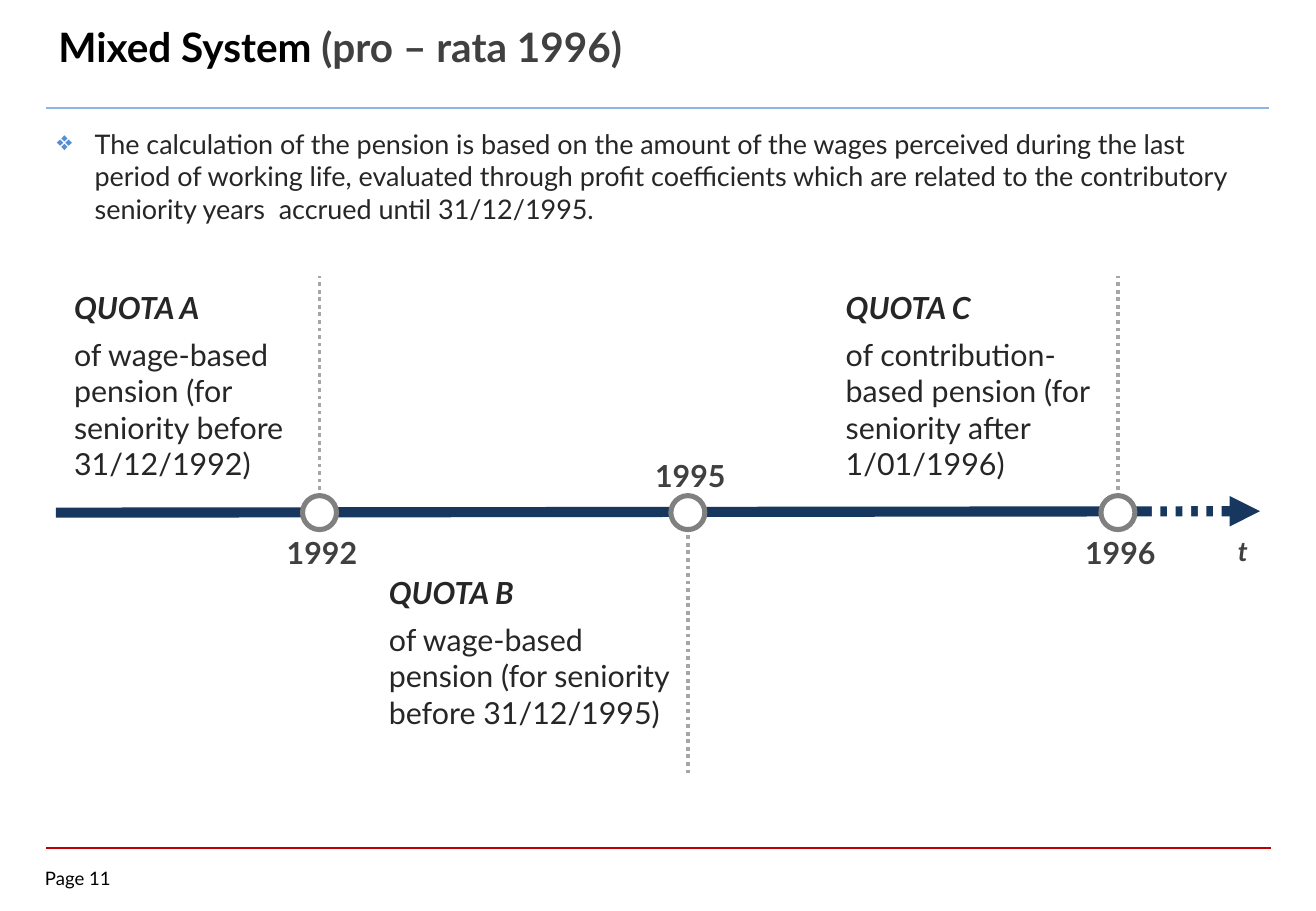
from lxml.etree import SubElement
from pptx import Presentation
from pptx.dml.color import RGBColor as RGB
from pptx.enum.dml import MSO_LINE as Dash
from pptx.enum.shapes import MSO_CONNECTOR as Conn, MSO_SHAPE as Shape
from pptx.enum.text import PP_ALIGN as Align
from pptx.oxml.ns import qn
from pptx.util import Cm, Pt

FONT = "Lato"
DARK, GREY = "262626", "404040"
TITLE = [("Mixed System ", "000000"), ("(pro – rata 1996)", GREY)]
INTRO = (
    "The calculation of the pension is based on the amount of the wages "
    "perceived during the last period of working life, evaluated through "
    "profit coefficients which are related to the contributory seniority "
    "years  accrued until 31/12/1995."
)
RULES = [(0.97, 26.52, 2.26, "8EB4E3", 1.5), (0.97, 26.57, 17.73, "C00000", 1)]
AXIS = 10.72
STOPS = [
    ("1992", 6.68, 10.97, 5.77),
    ("1995", 14.38, 9.37, 16.23),
    ("1996", 23.37, 10.97, 5.77),
]
QUOTAS = [
    ("QUOTA A", "of wage-based pension (for seniority before 31/12/1992)",
     1.55, 6.05, 5.21, 4.2),
    ("QUOTA B", "of wage-based pension (for seniority before 31/12/1995)",
     8.13, 12.01, 6.22, 3.4),
    ("QUOTA C", "of contribution-based pension (for seniority after 1/01/1996)",
     17.68, 6.05, 5.33, 4.2),
]
DOT, GAP_W, GAP_H = 0.71, 0.18, 0.51
GAPS, GAP_X, STEP = 5, 24.08, 0.32
SMALL = (0.1, 0.2, 0.1, 0.2)
QUOTA_INS = (0, 0, 0.1, 0)


def paint(part, tint):
    """Give a fill, line or font one solid colour."""
    if hasattr(part, "solid"):
        part.solid()
        part.fore_color.rgb = RGB.from_string(tint)
    else:
        part.color.rgb = RGB.from_string(tint)


def style(run, size, tint, bold=False, slant=False):
    """Format one run."""
    font = run.font
    font.name, font.size = FONT, Pt(size)
    font.bold, font.italic = bold, slant
    paint(font, tint)


def box(slide, area, lines, inset=(0.25, 0.13, 0.25, 0.13)):
    """Add a wrapped text box and return its paragraphs."""
    frame = slide.shapes.add_textbox(*map(Cm, area)).text_frame
    frame.word_wrap = True
    (frame.margin_left, frame.margin_top,
     frame.margin_right, frame.margin_bottom) = map(Cm, inset)
    frame.text = "\n".join(lines)
    return frame.paragraphs


def label(slide, text, mid, top, size, slant=False):
    """Add a centred label at the axis."""
    para = box(slide, (mid - 0.98, top, 1.96, 1.09), [text], SMALL)[0]
    para.alignment = Align.CENTER
    style(para.runs[0], size, GREY, True, slant)


def line(slide, ends, tint, width):
    """Add a straight line without shadow."""
    link = slide.shapes.add_connector(Conn.STRAIGHT, *map(Cm, ends))
    paint(link.line, tint)
    link.line.width = Pt(width)
    SubElement(link._element.spPr, qn("a:effectLst"))
    return link


def shape(slide, kind, area, edge=None):
    """Add a white shape, outlined if an edge colour is given."""
    item = slide.shapes.add_shape(kind, *map(Cm, area))
    item.shadow.inherit = False
    paint(item.fill, "FFFFFF")
    if edge:
        paint(item.line, edge)
        item.line.width = Pt(3)
    else:
        item.line.fill.background()


def bullet(para, mark, tint):
    """Give a paragraph a coloured hanging bullet."""
    props = para._p.get_or_add_pPr()
    props.set("marL", str(Cm(0.79)))
    props.set("indent", str(-Cm(0.79)))
    color = SubElement(props, qn("a:buClr"))
    SubElement(color, qn("a:srgbClr"), val=tint)
    SubElement(props, qn("a:buChar"), char=mark)


def head(slide):
    """Add the title, the intro, the rules and the page number."""
    for left, right, y, tint, width in RULES:
        line(slide, (left, y, right, y), tint, width)
    page = box(slide, (0.94, 18.14, 1.85, 0.56), ["Page 11"], (0, 0, 0, 0))[0]
    style(page.runs[0], 11, "000000")
    title = box(slide, (0.97, 0.33, 25.2, 1.8), [""])[0]
    for text, tint in TITLE:
        run = title.add_run()
        run.text = text
        style(run, 24, tint, True)
    intro = box(slide, (0.94, 2.54, 25.63, 2.31), [INTRO])[0]
    bullet(intro, "❖", "558ED5")
    style(intro.runs[0], 16, DARK)


def chart(slide):
    """Draw the time axis with its stops and quotas."""
    axis = line(slide, (1.17, AXIS, 26.34, AXIS - 0.03), "17375E", 6)
    SubElement(axis.line._get_or_add_ln(), qn("a:tailEnd"), type="triangle")
    for year, x, top, end in STOPS:
        link = line(slide, (x, AXIS, x, end), "A6A6A6", 2.25)
        link.line.dash_style = Dash.ROUND_DOT
        area = (x - DOT / 2, AXIS - DOT / 2, DOT, DOT)
        shape(slide, Shape.OVAL, area, "808080")
        label(slide, year, x + 0.05, top, 18)
    for i in range(GAPS):
        area = (GAP_X + i * STEP, AXIS - GAP_H / 2, GAP_W, GAP_H)
        shape(slide, Shape.RECTANGLE, area)
    for name, text, *area in QUOTAS:
        top, body = box(slide, area, [name, text], QUOTA_INS)
        style(top.runs[0], 18, DARK, True, True)
        style(body.runs[0], 18, DARK)
        body.space_before = Pt(6)
    label(slide, "t", 25.98, 10.97, 16, True)


def main():
    """Build and save the slide."""
    deck = Presentation()
    deck.slide_width, deck.slide_height = Cm(27.51), Cm(19.05)
    slide = deck.slides.add_slide(deck.slide_layouts[6])
    head(slide)
    chart(slide)
    deck.save("out.pptx")


if __name__ == "__main__":
    main()
